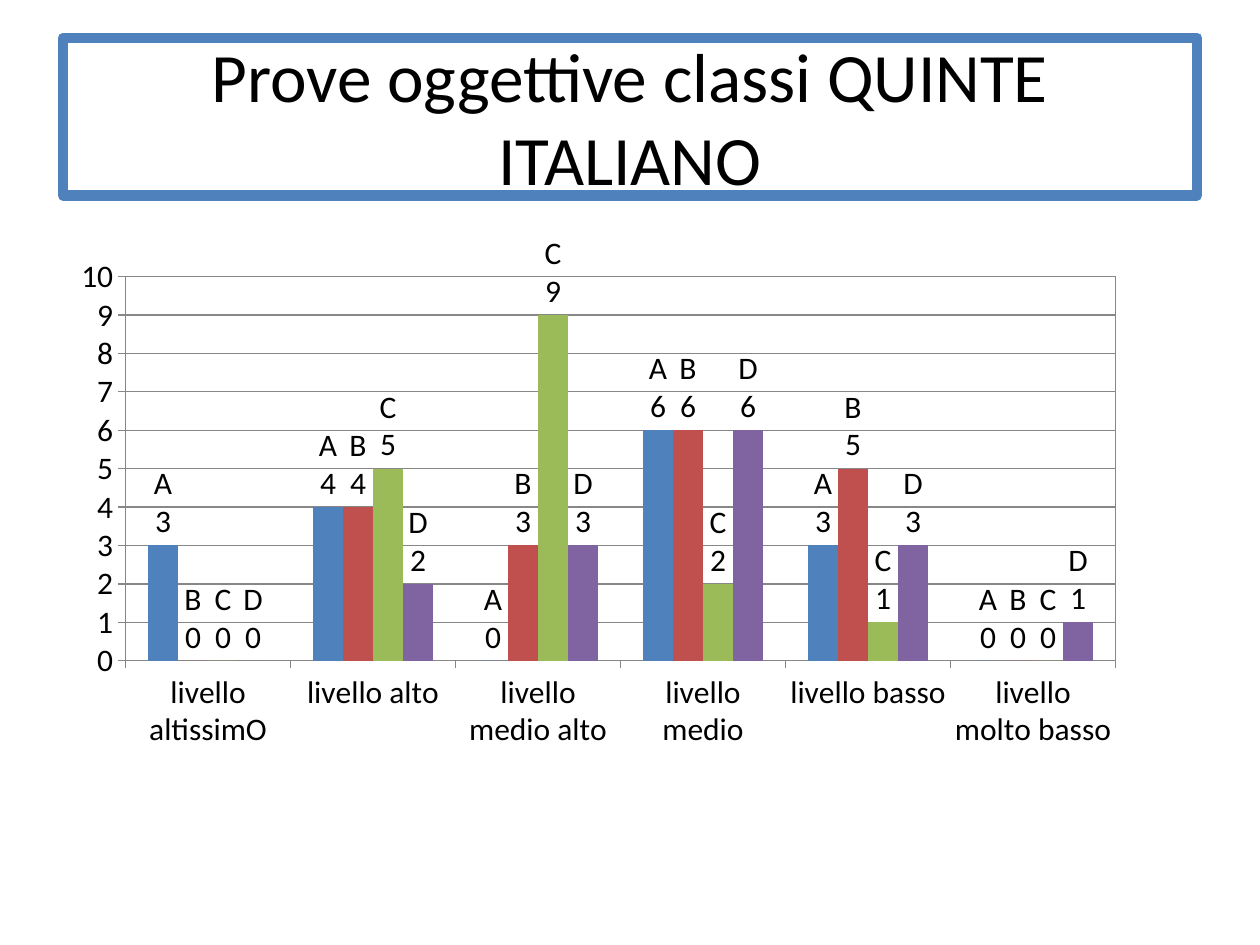
import pptx
import pptx.chart.data
import pptx.dml.color
import pptx.enum.chart
import pptx.enum.shapes
import pptx.enum.text
import pptx.oxml
import pptx.oxml.ns
import pptx.util

FONT = "Calibri"
WIDE, HIGH = pptx.util.Inches(10), pptx.util.Inches(7.5)
LEVELS = ["livello altissimO", "livello alto", "livello medio alto",
          "livello medio", "livello basso", "livello molto basso"]
CLASSES = {
    "A": ("4F81BD", (3, 4, 0, 6, 3, 0)),
    "B": ("C0504D", (0, 4, 3, 6, 5, 0)),
    "C": ("9BBB59", (0, 5, 9, 2, 1, 0)),
    "D": ("8064A2", (0, 2, 3, 6, 3, 1)),
}
GREY = "878787"
PLOT = {"x": 0.063, "y": 0.059, "w": 0.873, "h": 0.591}


def color(code):
    return pptx.dml.color.RGBColor.from_string(code)


def share(left, top, width, height):
    return [int(WIDE * left), int(HIGH * top), int(WIDE * width), int(HIGH * height)]


def node(text):
    space = pptx.oxml.ns.nsdecls("c", "a")
    head, mark, tail = text.partition(">")
    head, slash = (head[:-1], "/") if head.endswith("/") else (head, "")
    return pptx.oxml.parse_xml(f"{head} {space}{slash}{mark}{tail}")


def add_title(slide, box, text):
    shape = slide.shapes.add_shape(pptx.enum.shapes.MSO_SHAPE.RECTANGLE, *box)
    shape.shadow.inherit = False
    shape.fill.background()
    shape.line.color.rgb = color("4F81BD")
    shape.line.width = pptx.util.Pt(6)
    shape.line._get_or_add_ln().append(node("<a:round/>"))
    frame = shape.text_frame
    frame.word_wrap = True
    frame.vertical_anchor = pptx.enum.text.MSO_ANCHOR.MIDDLE
    frame.text = text
    line = frame.paragraphs[0]
    line.alignment = pptx.enum.text.PP_ALIGN.CENTER
    for run in line.runs:
        run.font.name = FONT
        run.font.size = pptx.util.Pt(39.6)
        run.font.color.rgb = color("000000")


def add_labels(series):
    labels = series.data_labels
    labels.show_value = True
    labels.show_series_name = True
    labels.position = pptx.enum.chart.XL_LABEL_POSITION.OUTSIDE_END
    last = labels._element.find(pptx.oxml.ns.qn("c:showBubbleSize"))
    last.addnext(node("<c:separator>\n</c:separator>"))


def set_plot(chart):
    area = chart._chartSpace.chart.plotArea
    for old in area.findall(pptx.oxml.ns.qn("c:layout")):
        area.remove(old)
    modes = "".join(f'<c:{key}Mode val="edge"/>' for key in "xy")
    sizes = "".join(f'<c:{key} val="{size}"/>' for key, size in PLOT.items())
    area.insert(0, node('<c:layout><c:manualLayout><c:layoutTarget val="inner"/>'
                        f"{modes}{sizes}</c:manualLayout></c:layout>"))
    area.append(node('<c:spPr><a:noFill/><a:ln w="9525"><a:solidFill>'
                     f'<a:srgbClr val="{GREY}"/></a:solidFill></a:ln></c:spPr>'))


def add_bars(slide, box):
    data = pptx.chart.data.CategoryChartData()
    data.categories = LEVELS
    for name, (_, marks) in CLASSES.items():
        data.add_series(name, marks)
    kind = pptx.enum.chart.XL_CHART_TYPE.COLUMN_CLUSTERED
    chart = slide.shapes.add_chart(kind, *box, data).chart
    chart.has_legend = False
    chart.has_title = False
    chart.font.name = FONT
    chart.font.size = pptx.util.Pt(18)
    chart.font.color.rgb = color("000000")
    plot = chart.plots[0]
    plot.gap_width = 150
    plot.overlap = 0
    plot.vary_by_categories = False
    for series, (code, _) in zip(plot.series, CLASSES.values()):
        series.format.fill.solid()
        series.format.fill.fore_color.rgb = color(code)
        add_labels(series)
    scale = chart.value_axis
    scale.minimum_scale, scale.maximum_scale, scale.major_unit = 0, 10, 1
    scale.has_major_gridlines = True
    for axis in (scale, chart.category_axis):
        axis.major_tick_mark = pptx.enum.chart.XL_TICK_MARK.OUTSIDE
        axis.minor_tick_mark = pptx.enum.chart.XL_TICK_MARK.NONE
    for part in (scale, chart.category_axis, scale.major_gridlines):
        part.format.line.color.rgb = color(GREY)
        part.format.line.width = pptx.util.Pt(0.75)
    set_plot(chart)


def main():
    deck = pptx.Presentation()
    deck.slide_width, deck.slide_height = WIDE, HIGH
    slide = deck.slides.add_slide(deck.slide_layouts[6])
    add_title(slide, share(0.05, 0.04, 0.9, 1 / 6), "Prove oggettive classi QUINTE\vITALIANO")
    add_bars(slide, share(0.043, 0.248, 0.9, 0.692))
    deck.save("out.pptx")


if __name__ == "__main__":
    main()
